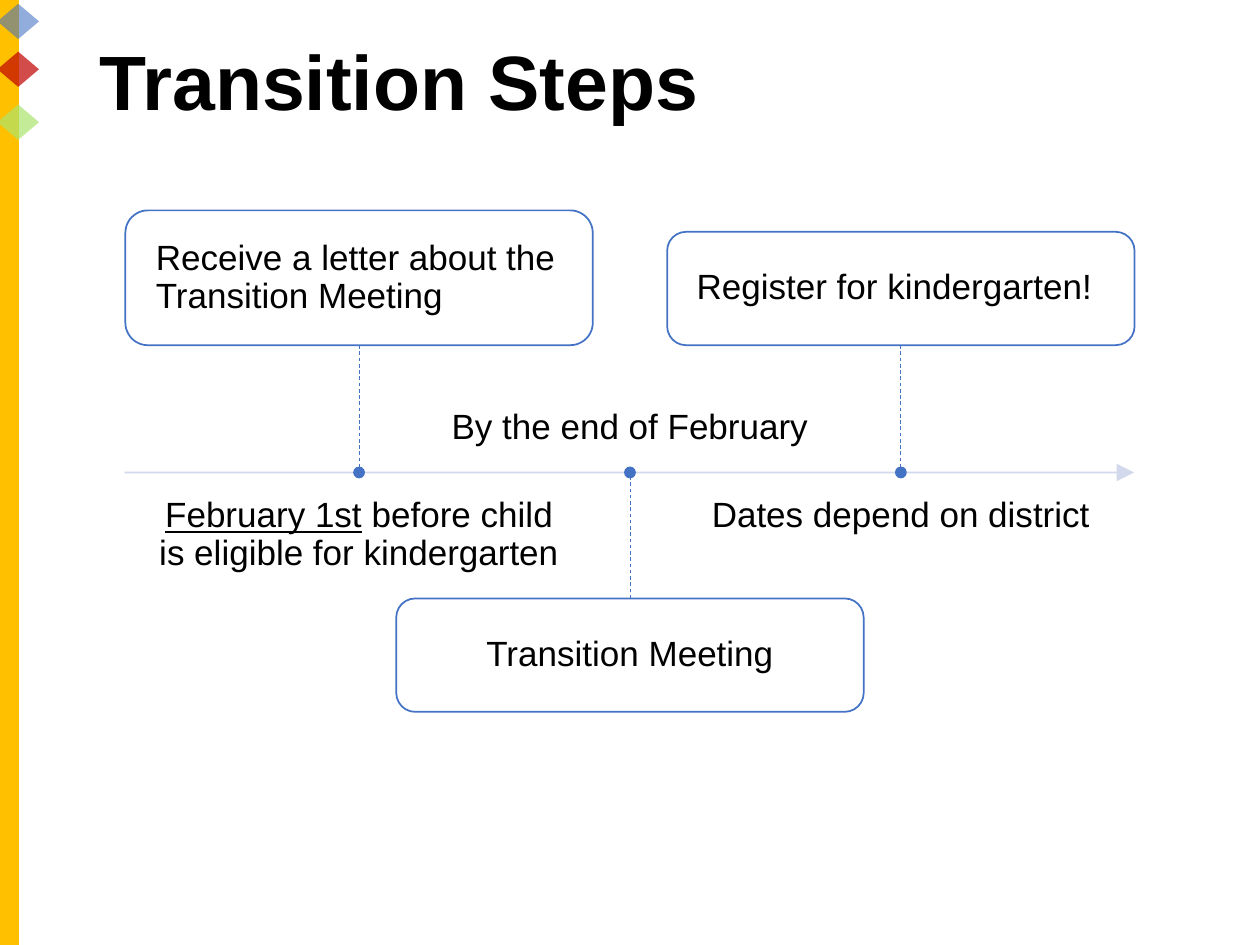
from dataclasses import dataclass
from typing import Optional

from lxml.etree import SubElement
from pptx import Presentation
from pptx.dml.color import RGBColor
from pptx.enum.dml import MSO_LINE
from pptx.enum.shapes import MSO_CONNECTOR, MSO_SHAPE
from pptx.enum.text import MSO_ANCHOR, PP_ALIGN
from pptx.oxml.ns import qn
from pptx.util import Inches, Pt

BLUE, PALE, GOLD, WHITE, BLACK = "4472C4", "CFD5EA", "FFC000", "FFFFFF", "000000"
AXIS = 3.75           # height of the time line
MID, STEP = 5, 2.15   # middle of the slide, gap between dates
DOT = 0.08


@dataclass
class Event:
    label: str
    top: float
    height: float
    align: PP_ALIGN
    mark: str              # underlined start of the date
    date: str
    above: bool = True     # box above the time line


EVENTS = [
    Event("Receive a letter about the Transition Meeting", 1.67, 1.07,
          PP_ALIGN.LEFT, "February 1st", " before child is eligible for kindergarten"),
    Event("Transition Meeting", 4.75, 0.9, PP_ALIGN.CENTER,
          "", "By the end of February", above=False),
    Event("Register for kindergarten!", 1.84, 0.9, PP_ALIGN.LEFT,
          "", "Dates depend on district"),
]

# Side diamonds: top, colour, opacity
GEMS = [(0.03, BLUE, 58), (0.41, "C00000", 70), (0.83, "ABE46D", 70)]


def paint(fill, tone: str, alpha: int = 100) -> None:
    fill.solid()
    fill.fore_color.rgb = RGBColor.from_string(tone)
    if alpha < 100:
        node = fill._xPr.find(".//" + qn("a:srgbClr"))
        SubElement(node, qn("a:alpha")).set("val", str(alpha * 1000))


def draw(slide, kind: MSO_SHAPE, x: float, y: float, w: float, h: float,
         tone: str, alpha: int = 100, edge: Optional[str] = None):
    shape = slide.shapes.add_shape(kind, Inches(x), Inches(y), Inches(w), Inches(h))
    shape.shadow.inherit = False
    paint(shape.fill, tone, alpha)
    if edge:
        paint(shape.line.fill, edge)
        shape.line.width = Pt(1)
    else:
        shape.line.fill.background()
    return shape


def link(slide, x1: float, y1: float, x2: float, y2: float,
         tone: str, width: float, alpha: int = 100):
    line = slide.shapes.add_connector(
        MSO_CONNECTOR.STRAIGHT, Inches(x1), Inches(y1), Inches(x2), Inches(y2))
    paint(line.line.fill, tone, alpha)
    line.line.width = Pt(width)
    SubElement(line._element.spPr, qn("a:effectLst"))
    return line


def write(shape, runs: list, align: PP_ALIGN, anchor: MSO_ANCHOR, inset: float,
          size: int = 20, bold: bool = False) -> None:
    frame = shape.text_frame
    pad = Inches(inset)
    style = {"word_wrap": True, "vertical_anchor": anchor,
             "margin_left": pad, "margin_right": pad,
             "margin_top": pad, "margin_bottom": pad}
    for name, value in style.items():
        setattr(frame, name, value)
    para = frame.paragraphs[0]
    for name, value in {"alignment": align, "line_spacing": 0.9}.items():
        setattr(para, name, value)
    for text, under in runs:
        run = para.add_run()
        run.text = text
        face = {"name": "Arial", "size": Pt(size), "bold": bold, "underline": under}
        for name, value in face.items():
            setattr(run.font, name, value)
        run.font.color.rgb = RGBColor.from_string(BLACK)


def add_event(slide, event: Event, x: float) -> None:
    # Box with its label
    wide = 3.71
    box = draw(slide, MSO_SHAPE.ROUNDED_RECTANGLE, x - wide / 2, event.top,
               wide, event.height, WHITE, 90, BLUE)
    write(box, [(event.label, False)], event.align, MSO_ANCHOR.MIDDLE, 0.19)

    # Dashed stem from box to time line
    edge = event.top + event.height if event.above else event.top
    stem = link(slide, x, edge, x, AXIS, BLUE, 0.5)
    stem.line.dash_style = MSO_LINE.DASH
    stem.begin_connect(box, 2 if event.above else 0)
    draw(slide, MSO_SHAPE.OVAL, x - DOT / 2, AXIS - DOT / 2, DOT, DOT, BLUE, edge=BLUE)

    # Date on the other side of the time line
    wide, high, gap = 3.27, 0.6, 0.2
    top = AXIS + gap if event.above else AXIS - gap - high
    date = slide.shapes.add_textbox(
        Inches(x - wide / 2), Inches(top), Inches(wide), Inches(high))
    runs = [(event.mark, True)] if event.mark else []
    write(date, runs + [(event.date, False)], PP_ALIGN.CENTER,
          MSO_ANCHOR.TOP if event.above else MSO_ANCHOR.BOTTOM, 0)


def main() -> None:
    deck = Presentation()
    deck.slide_width, deck.slide_height = Inches(10), Inches(7.5)
    slide = deck.slides.add_slide(deck.slide_layouts[5])

    # Side band
    draw(slide, MSO_SHAPE.RECTANGLE, 0, 0, 0.15, 7.5, GOLD)
    for top, tone, alpha in GEMS:
        draw(slide, MSO_SHAPE.DIAMOND, -0.02, top, 0.33, 0.28, tone, alpha)

    # Title
    title = slide.shapes.title
    place = {"left": 0.69, "top": 0.26, "width": 8.62, "height": 0.8}
    for name, value in place.items():
        setattr(title, name, Inches(value))
    write(title, [("Transition Steps", False)], PP_ALIGN.LEFT,
          MSO_ANCHOR.BOTTOM, 0.1, 44, True)
    title.text_frame.margin_top = title.text_frame.margin_bottom = Inches(0.05)

    # Time line
    axis = link(slide, 0.99, AXIS, 9, AXIS, PALE, 1, 90)
    SubElement(axis.line._get_or_add_ln(), qn("a:tailEnd"),
               type="triangle", w="lg", len="lg")
    for i, event in enumerate(EVENTS):
        add_event(slide, event, MID + (i - 1) * STEP)

    deck.save("out.pptx")


if __name__ == "__main__":
    main()
